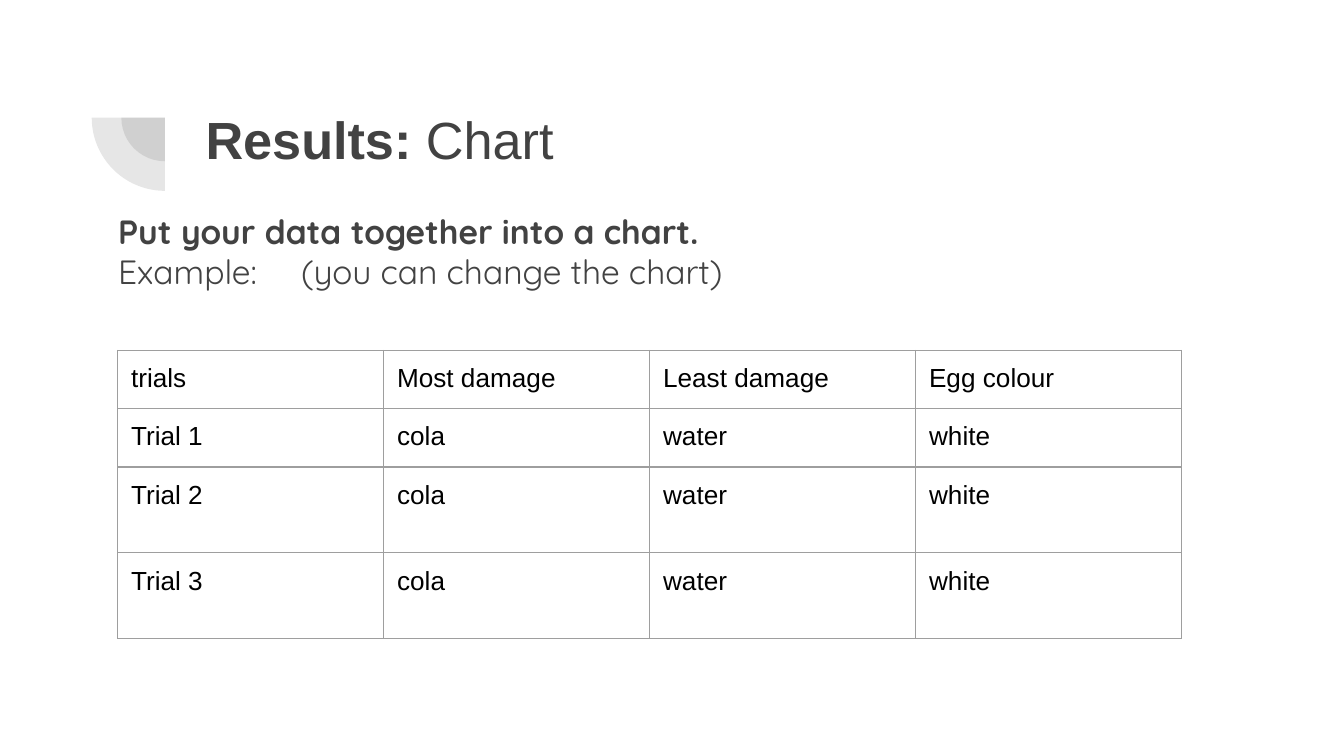
import lxml.etree
import pptx
import pptx.dml.color
import pptx.enum.shapes
import pptx.oxml.ns
import pptx.util

Pt = pptx.util.Pt
qn = pptx.oxml.ns.qn
CHARCOAL = pptx.dml.color.RGBColor(0x42, 0x42, 0x42)
BLACK = pptx.dml.color.RGBColor(0, 0, 0)
GRID_GREY = pptx.dml.color.RGBColor(0x9E, 0x9E, 0x9E)


class ResultsSlide:
    heading_font = "Arial"
    body_font = "Quicksand"
    inset = Pt(7.2)
    border = Pt(0.75)

    def __init__(self, presentation):
        self.slide = presentation.slides.add_slide(presentation.slide_layouts[6])

    def style(self, paragraph, font, size, color, bold=None):
        paragraph.font.name = font
        paragraph.font.size = Pt(size)
        paragraph.font.color.rgb = color
        paragraph.font.bold = bold

    def quarter_disc(self, center_x, center_y, diameter):
        disc = self.slide.shapes.add_shape(
            pptx.enum.shapes.MSO_SHAPE.PIE,
            Pt(center_x - diameter / 2), Pt(center_y - diameter / 2),
            Pt(diameter), Pt(diameter))
        disc.adjustments[0] = 108
        disc.adjustments[1] = 162
        disc.rotation = 270
        disc.shadow.inherit = False
        disc.line.fill.background()
        disc.fill.solid()
        disc.fill.fore_color.rgb = CHARCOAL
        tint = disc.element.spPr.find(qn("a:solidFill")).find(qn("a:srgbClr"))
        lxml.etree.SubElement(tint, qn("a:alpha"), val="13000")

    def text_frame(self, left, top, width, height):
        frame = self.slide.shapes.add_textbox(
            Pt(left), Pt(top), Pt(width), Pt(height)).text_frame
        frame.word_wrap = True
        frame.margin_left = frame.margin_right = self.inset
        frame.margin_top = frame.margin_bottom = self.inset
        return frame

    def title(self, label, topic, *box):
        heading = self.text_frame(*box).paragraphs[0]
        heading.line_spacing = 1.1
        self.style(heading, self.heading_font, 28, CHARCOAL)
        for words, bold in ((label + " ", True), (topic, False)):
            run = heading.add_run()
            run.text = words
            run.font.bold = bold

    def instructions(self, lines, tab, *box):
        frame = self.text_frame(*box)
        for index, (words, bold) in enumerate(lines):
            line = frame.add_paragraph() if index else frame.paragraphs[0]
            line.text = words
            self.style(line, self.body_font, 18, CHARCOAL, bold)
            if "\t" in words:
                properties = line._p.get_or_add_pPr()
                stops = lxml.etree.Element(qn("a:tabLst"))
                lxml.etree.SubElement(stops, qn("a:tab"), pos=str(Pt(tab)), algn="l")
                properties.insert(0, stops)

    def outline(self, cell):
        properties = cell._tc.get_or_add_tcPr()
        for side in ("lnL", "lnR", "lnT", "lnB"):
            edge = lxml.etree.SubElement(
                properties, qn("a:" + side), w=str(self.border))
            fill = lxml.etree.SubElement(edge, qn("a:solidFill"))
            lxml.etree.SubElement(fill, qn("a:srgbClr"), val=str(GRID_GREY))

    def table(self, records, left, top, column_width, row_heights):
        columns = len(records[0])
        results = self.slide.shapes.add_table(
            len(records), columns, Pt(left), Pt(top),
            Pt(column_width * columns), Pt(sum(row_heights))).table
        results.first_row = results.horz_banding = False
        for column in results.columns:
            column.width = Pt(column_width)
        for row, height, record in zip(results.rows, row_heights, records):
            row.height = Pt(height)
            for cell, words in zip(row.cells, record):
                cell.text = words
                cell.margin_left = cell.margin_right = self.inset
                cell.margin_top = cell.margin_bottom = self.inset
                self.style(cell.text_frame.paragraphs[0],
                           self.heading_font, 14, BLACK)
                self.outline(cell)
                cell.fill.background()


def main():
    presentation = pptx.Presentation()
    presentation.slide_width = Pt(720)
    presentation.slide_height = Pt(405)
    slide = ResultsSlide(presentation)

    for diameter in (46.8, 78.5):
        slide.quarter_disc(88.4, 63, diameter)
    slide.title("Results:", "Chart", 103, 46.8, 553.7, 78.5)
    slide.instructions(
        [("Put your data together into a chart.", True),
         ("Example:\t(you can change the chart)", False)],
        98, 56.2, 105.8, 607.7, 58.3)

    header = ("trials", "Most damage", "Least damage", "Egg colour")
    trials = [(f"Trial {number}", "cola", "water", "white")
              for number in range(1, 4)]
    slide.table([header] + trials, 63, 187.7, 142.5, (30.2, 30.2, 46, 46))

    presentation.save("out.pptx")


if __name__ == "__main__":
    main()
